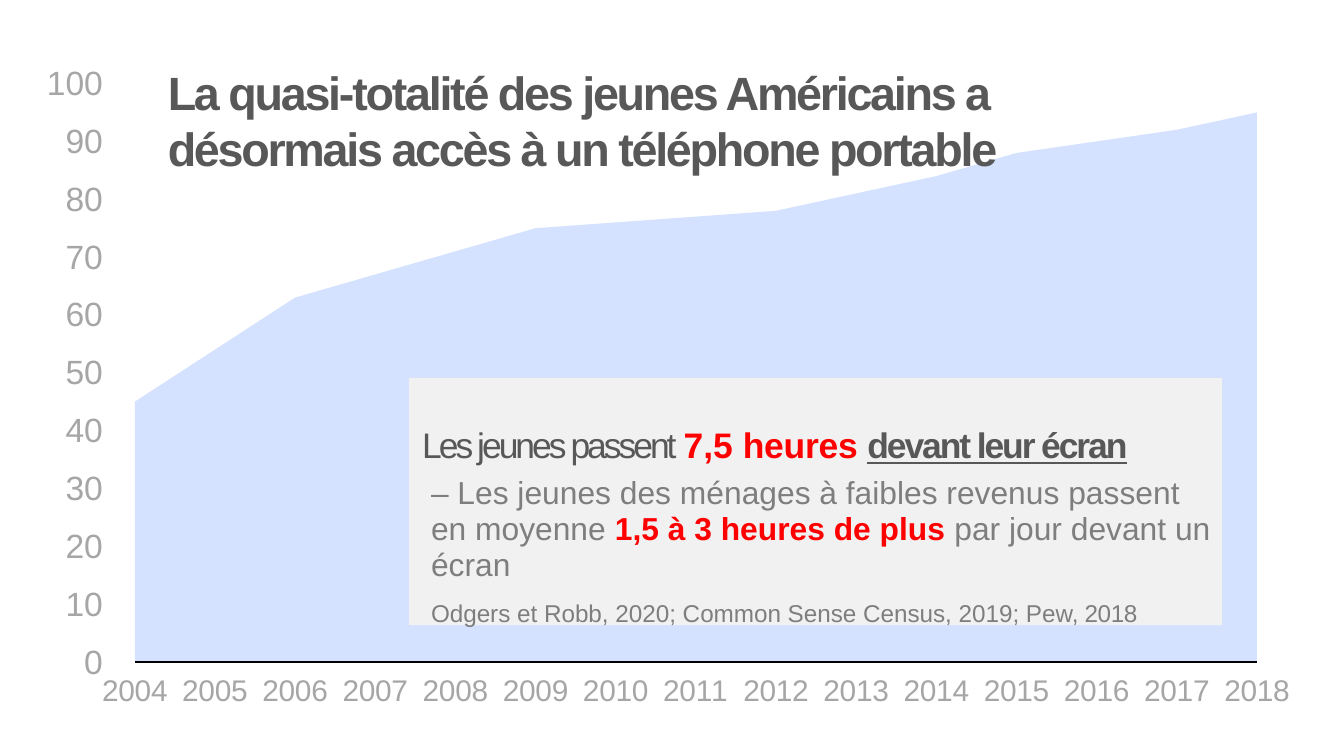
from lxml.etree import SubElement
from pptx import Presentation
from pptx.chart.data import CategoryChartData
from pptx.dml.color import RGBColor
from pptx.enum.chart import XL_CHART_TYPE as Kind, XL_TICK_MARK as Tick
from pptx.enum.shapes import MSO_CONNECTOR as Link, MSO_SHAPE as Form
from pptx.enum.text import MSO_ANCHOR as Anchor, PP_ALIGN as Align
from pptx.oxml.ns import qn
from pptx.util import Pt

FONT = "Arial"
COLORS = {"area": "D4E2FF", "axis": "000000", "label": "A6A6A6", "dark": "585858",
          "gray": "7E7E7E", "red": "FF0000", "panel": "F1F1F1"}
WIDE, HIGH = 720, 405
PLOT = (72.2, 44.8, 601.2, 310)
FIRST = 2004
SHARES = [45, 54, 63, 67, 71, 75, 76, 77, 78, 81, 84, 88, 90, 92, 95]
TITLE = "La quasi-totalité des jeunes Américains a désormais accès à un téléphone portable"

# paragraph: size, left indent, space before, exact line height, runs
# run: text, color, bold, underline, letter spacing
NOTES = [
    (19, 7.2, 0, None, [
        ("Les jeunes passent ", "dark", False, False, -1.6),
        ("7,5 ", "red", True, False, 0),
        ("heures ", "red", True, False, -0.1),
        ("devant leur écran", "dark", True, True, -1.1)]),
    (17, 11.9, 4.5, 19.4, [
        ("– Les jeunes des ménages à faibles revenus passent en moyenne ",
         "gray", False, False, 0),
        ("1,5 à 3 heures de plus ", "red", True, False, 0),
        ("par jour devant un écran", "gray", False, False, 0)]),
    (13, 11.9, 4.5, 19.4, [
        ("Odgers et Robb, 2020; Common Sense Census, 2019; Pew, ",
         "gray", False, False, 0),
        ("2018", "gray", False, False, -0.2)]),
]


def color(name):
    return RGBColor.from_string(COLORS[name])


def place(shape, left, top, width, height):
    shape.left, shape.top = Pt(left), Pt(top)
    shape.width, shape.height = Pt(width), Pt(height)


def inset(frame, top):
    frame.margin_left = frame.margin_right = frame.margin_bottom = 0
    frame.margin_top = Pt(top)
    frame.vertical_anchor = Anchor.TOP
    frame.word_wrap = True


def track(run, points):
    """Set the letter spacing of a run."""
    run._r.get_or_add_rPr().set("spc", str(round(points * 100)))


def pin(chart):
    """Fix the inner plot area at PLOT."""
    area = chart._chartSpace.chart.plotArea
    for old in area.findall(qn("c:layout")):
        area.remove(old)
    layout = SubElement(area, qn("c:layout"))
    area.insert(0, layout)
    box = SubElement(layout, qn("c:manualLayout"))
    left, top, width, height = PLOT
    parts = [("layoutTarget", "inner"), ("xMode", "edge"), ("yMode", "edge"),
             ("x", left / WIDE), ("y", top / HIGH),
             ("w", width / WIDE), ("h", height / HIGH)]
    for tag, value in parts:
        SubElement(box, qn("c:" + tag)).set("val", str(value))


def add_area(slide):
    data = CategoryChartData()
    data.categories = [str(FIRST + i) for i in range(len(SHARES))]
    data.add_series("Accès (%)", SHARES)
    graph = slide.shapes.add_chart(Kind.AREA, 0, 0, Pt(WIDE), Pt(HIGH), data)
    chart = graph.chart
    chart.has_legend = chart.has_title = False
    chart.font.name = FONT
    chart.font.color.rgb = color("label")
    fill = chart.plots[0].series[0].format.fill
    fill.solid()
    fill.fore_color.rgb = color("area")

    years, scale = chart.category_axis, chart.value_axis
    for axis, size in ((years, 16), (scale, 18)):
        axis.has_major_gridlines = False
        # unseen ticks hold the labels away from the plot
        axis.major_tick_mark, axis.minor_tick_mark = Tick.OUTSIDE, Tick.NONE
        axis.format.line.fill.background()
        axis.tick_labels.font.size = Pt(size)
        axis.tick_labels.font.name = FONT
        axis.tick_labels.font.color.rgb = color("label")
    scale.minimum_scale, scale.maximum_scale, scale.major_unit = 0, 100, 10
    scale.tick_labels.number_format = "0_0"
    scale.tick_labels.number_format_is_linked = False
    scale._element.find(qn("c:crossBetween")).set("val", "midCat")
    pin(chart)
    return graph


def add_base(slide):
    left, top, width, height = PLOT
    base = slide.shapes.add_connector(
        Link.STRAIGHT, Pt(left), Pt(top + height), Pt(left + width), Pt(top + height))
    base.line.color.rgb = color("axis")
    base.line.width = Pt(0.96)
    SubElement(base._element.spPr, qn("a:effectLst"))


def set_title(slide):
    title = slide.shapes.title
    place(title, 89.9, 33.1, 517, 61.2)
    frame = title.text_frame
    inset(frame, 1)
    para = frame.paragraphs[0]
    run = para.add_run()
    run.text = TITLE
    track(run, -1.2)
    para.alignment = Align.LEFT
    font = para.font
    font.name, font.size, font.bold = FONT, Pt(25), True
    font.color.rgb = color("dark")


def add_panel(slide):
    panel = slide.shapes.add_shape(Form.RECTANGLE, 0, 0, 0, 0)
    place(panel, 219, 202.5, 435.6, 132.5)
    panel.shadow.inherit = False
    panel.fill.solid()
    panel.fill.fore_color.rgb = color("panel")
    panel.line.fill.background()
    frame = panel.text_frame
    inset(frame, 24.3)
    for i, (size, left, before, line, runs) in enumerate(NOTES):
        para = frame.add_paragraph() if i else frame.paragraphs[0]
        para._p.get_or_add_pPr().set("marL", str(Pt(left)))
        para.alignment = Align.LEFT
        para.font.name, para.font.size = FONT, Pt(size)
        if i:
            para.space_before = Pt(before)
        if line:
            para.line_spacing = Pt(line)
        for text, tone, bold, under, space in runs:
            run = para.add_run()
            run.text = text
            run.font.bold, run.font.underline = bold, under
            run.font.color.rgb = color(tone)
            track(run, space)


def main():
    deck = Presentation()
    deck.slide_width, deck.slide_height = Pt(WIDE), Pt(HIGH)
    slide = deck.slides.add_slide(deck.slide_layouts[5])
    graph = add_area(slide)
    add_base(slide)
    set_title(slide)
    graph._element.addnext(slide.shapes.title._element)
    add_panel(slide)
    deck.save("out.pptx")


if __name__ == "__main__":
    main()
